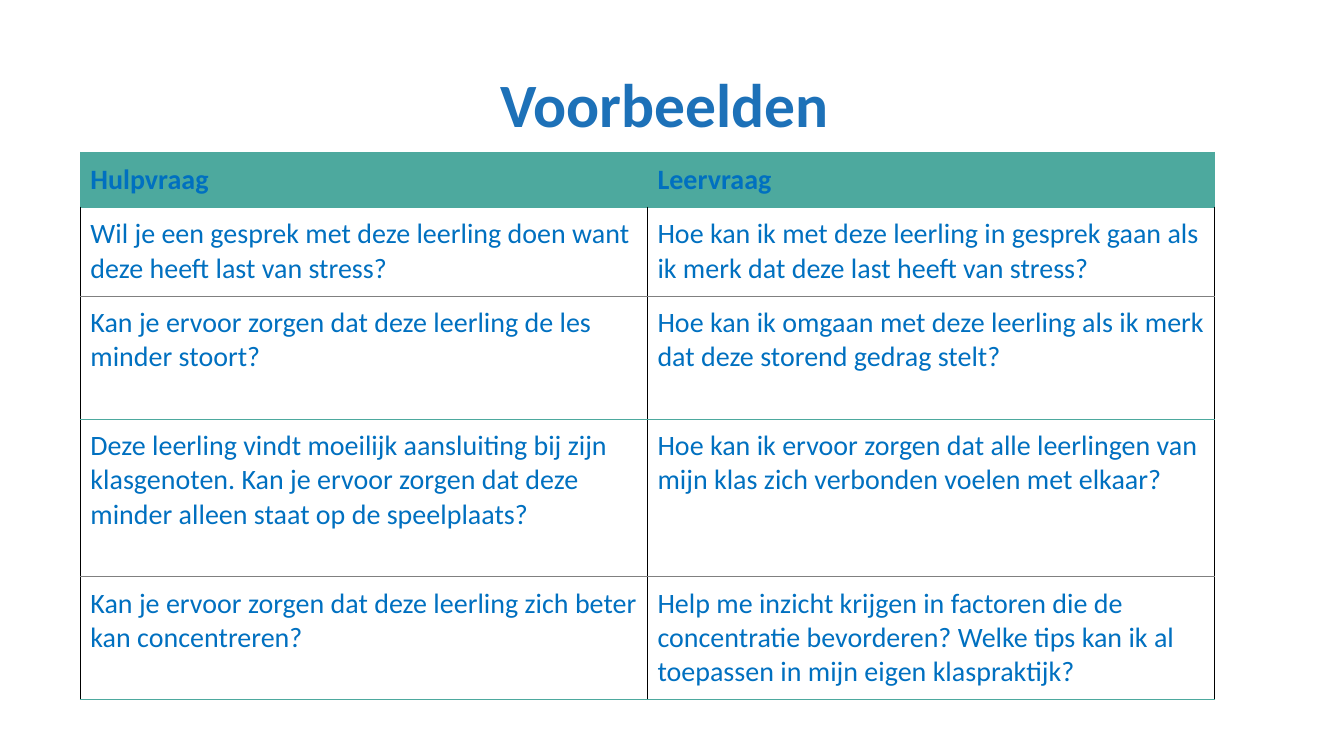
from dataclasses import dataclass

import lxml.etree
import pptx
import pptx.dml.color
import pptx.enum.text
import pptx.oxml.ns
import pptx.util

Cm = pptx.util.Cm
Pt = pptx.util.Pt


@dataclass(frozen=True)
class Theme:
    font: str = "Calibri"
    title_color: str = "1D71B8"
    text_color: str = "0070C0"
    teal: str = "4DA99E"
    grey: str = "808080"
    black: str = "000000"
    title_size: int = 44
    table_size: int = 20
    thin: float = 0.75
    upright: float = 1.0


@dataclass(frozen=True)
class Example:
    help_question: str
    learning_question: str
    height: float
    top: str
    bottom: str
    is_header: bool = False


THEME = Theme()
COLUMN_WIDTH = 14.29
EXAMPLES = [
    Example("Hulpvraag", "Leervraag", 1.38, THEME.teal, THEME.teal, True),
    Example("Wil je een gesprek met deze leerling doen want deze heeft last van stress?",
            "Hoe kan ik met deze leerling in gesprek gaan als ik merk dat deze last heeft van stress?",
            2.24, THEME.teal, THEME.grey),
    Example("Kan je ervoor zorgen dat deze leerling de les minder stoort?",
            "Hoe kan ik omgaan met deze leerling als ik merk dat deze storend gedrag stelt?",
            3.1, THEME.grey, THEME.teal),
    Example("Deze leerling vindt moeilijk aansluiting bij zijn klasgenoten. "
            "Kan je ervoor zorgen dat deze minder alleen staat op de speelplaats?",
            "Hoe kan ik ervoor zorgen dat alle leerlingen van mijn klas zich verbonden voelen met elkaar?",
            3.97, THEME.teal, THEME.grey),
    Example("Kan je ervoor zorgen dat deze leerling zich beter kan concentreren?",
            "Help me inzicht krijgen in factoren die de concentratie bevorderen? "
            "Welke tips kan ik al toepassen in mijn eigen klaspraktijk?",
            3.1, THEME.grey, THEME.teal),
]


def set_format(target: object, values: dict[str, object]) -> None:
    for attribute, value in values.items():
        setattr(target, attribute, value)


def set_font(font: pptx.text.text.Font, size: int, color: str, bold: bool) -> None:
    set_format(font, {"name": THEME.font, "size": Pt(size), "bold": bold})
    font.color.rgb = pptx.dml.color.RGBColor.from_string(color)


def add_border(cell: pptx.table._Cell, side: str, color: str, width: float) -> None:
    """Draw one cell side; sides must be added in the order L, R, T, B."""
    qn = pptx.oxml.ns.qn
    properties = cell._tc.get_or_add_tcPr()
    line = lxml.etree.SubElement(properties, qn(f"a:ln{side}"), w=str(Pt(width)))
    fill = lxml.etree.SubElement(line, qn("a:solidFill"))
    lxml.etree.SubElement(fill, qn("a:srgbClr"), val=color)


def fill_cell(cell: pptx.table._Cell, text: str, example: Example) -> None:
    cell.text = text
    margins = ("margin_left", "margin_right", "margin_top", "margin_bottom")
    set_format(cell, dict.fromkeys(margins, Cm(0.25)))
    set_font(cell.text_frame.paragraphs[0].runs[0].font,
             THEME.table_size, THEME.text_color, example.is_header)
    side_color = THEME.teal if example.is_header else THEME.black
    side_width = THEME.thin if example.is_header else THEME.upright
    for side in "LR":
        add_border(cell, side, side_color, side_width)
    add_border(cell, "T", example.top, THEME.thin)
    add_border(cell, "B", example.bottom, THEME.thin)
    if example.is_header:
        cell.fill.solid()
        cell.fill.fore_color.rgb = pptx.dml.color.RGBColor.from_string(THEME.teal)
    else:
        cell.fill.background()


def write_title(slide: pptx.slide.Slide) -> None:
    title = slide.shapes.title
    set_format(title, {"left": Cm(6.2), "top": Cm(1.07),
                       "width": Cm(21.46), "height": Cm(3.3)})
    frame = title.text_frame
    frame.text = "Voorbeelden "
    set_format(frame, {
        "auto_size": pptx.enum.text.MSO_AUTO_SIZE.NONE,
        "vertical_anchor": pptx.enum.text.MSO_ANCHOR.MIDDLE,
        "word_wrap": True,
        "margin_left": Cm(0.5), "margin_right": Cm(0.5),
        "margin_top": Cm(0.5), "margin_bottom": Cm(0.5),
    })
    heading = frame.paragraphs[0]
    set_format(heading, {"alignment": pptx.enum.text.PP_ALIGN.CENTER, "line_spacing": 0.9})
    set_font(heading.runs[0].font, THEME.title_size, THEME.title_color, True)


def add_examples(slide: pptx.slide.Slide) -> None:
    total_height = sum(example.height for example in EXAMPLES)
    examples_table = slide.shapes.add_table(
        len(EXAMPLES), 2, Cm(2.03), Cm(3.84), Cm(2 * COLUMN_WIDTH), Cm(total_height)).table
    examples_table.horz_banding = False
    for column in examples_table.columns:
        column.width = Cm(COLUMN_WIDTH)
    for row, example in zip(examples_table.rows, EXAMPLES):
        row.height = Cm(example.height)
        questions = (example.help_question, example.learning_question)
        for cell, question in zip(row.cells, questions):
            fill_cell(cell, question, example)


def main() -> None:
    presentation = pptx.Presentation()
    set_format(presentation, {"slide_width": Cm(33.87), "slide_height": Cm(19.05)})
    slide = presentation.slides.add_slide(presentation.slide_layouts[5])
    write_title(slide)
    add_examples(slide)
    presentation.save("out.pptx")


if __name__ == "__main__":
    main()
